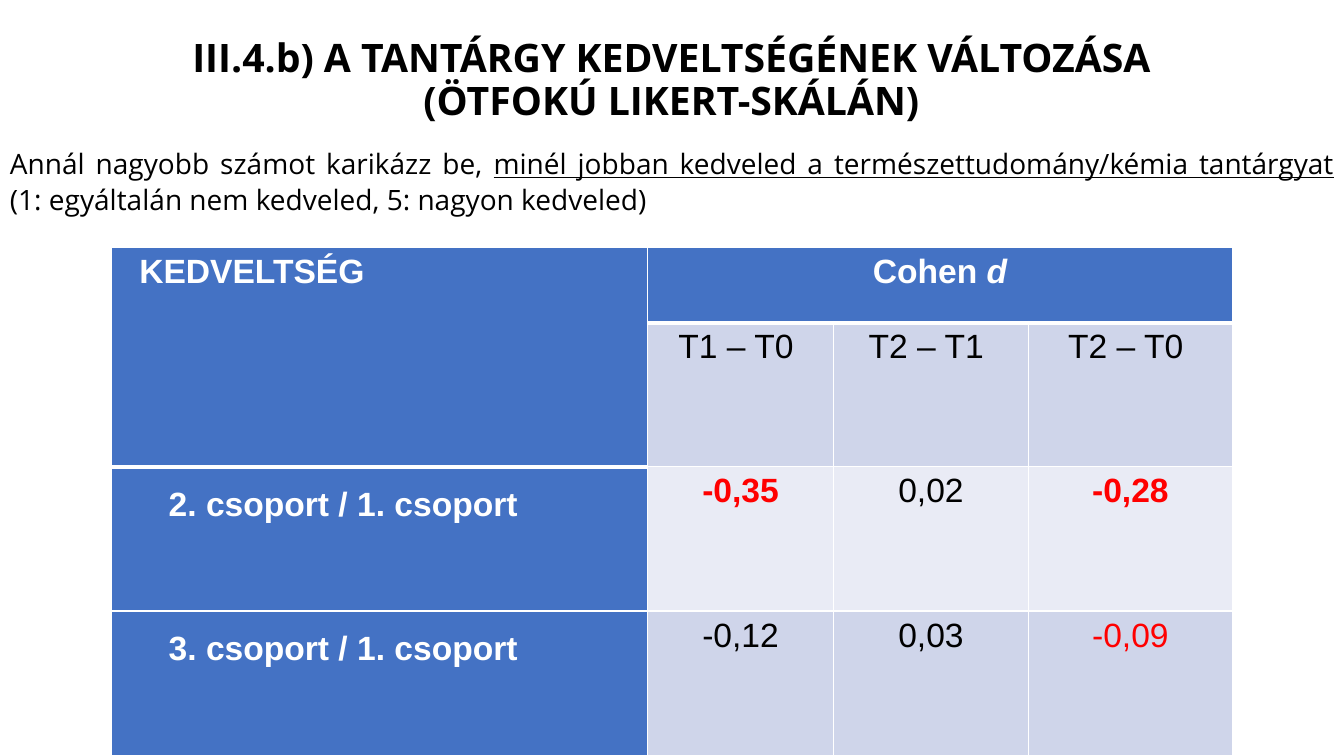
import pptx
import pptx.dml.color
import pptx.enum.text
import pptx.oxml
import pptx.oxml.ns
import pptx.util

Pt = pptx.util.Pt
RGBColor = pptx.dml.color.RGBColor
Align = pptx.enum.text.PP_ALIGN
Anchor = pptx.enum.text.MSO_ANCHOR

BLACK = RGBColor(0x00, 0x00, 0x00)
WHITE = RGBColor(0xFF, 0xFF, 0xFF)
RED = RGBColor(0xFF, 0x00, 0x00)
BLUE = RGBColor(0x44, 0x72, 0xC4)
BAND_DARK = RGBColor(0xCF, 0xD5, 0xEA)
BAND_LIGHT = RGBColor(0xE9, 0xEB, 0xF5)

TITLE_LINES = ["III.4.b) A TANTÁRGY KEDVELTSÉGÉNEK VÁLTOZÁSA", "(ÖTFOKÚ LIKERT-SKÁLÁN)"]
COLUMN_WIDTHS = [383, 133, 139, 146]
ROW_HEIGHTS = [54, 103, 103, 103]
PERIODS = ["T1 – T0 ", "T2 – T1 ", "T2 – T0 "]
# Each effect: value, colour, bold
GROUPS = [
    ("2. csoport / 1. csoport", BAND_LIGHT,
     [("-0,35", RED, True), ("0,02", BLACK, False), ("-0,28", RED, True)]),
    ("3. csoport / 1. csoport", BAND_DARK,
     [("-0,12", BLACK, False), ("0,03", BLACK, False), ("-0,09", RED, False)]),
]


def add_run(paragraph, text, size, font="Open Sans", color=BLACK,
            bold=False, italic=False, underline=False):
    run = paragraph.add_run()
    run.text = text
    run.font.name = font
    run.font.size = Pt(size)
    run.font.color.rgb = color
    run.font.bold = bold
    run.font.italic = italic
    run.font.underline = underline


def fill_title(title):
    title.left, title.top, title.width, title.height = Pt(79), Pt(14), Pt(801), Pt(88)
    title.text_frame.vertical_anchor = Anchor.MIDDLE
    paragraph = title.text_frame.paragraphs[0]
    paragraph.alignment = Align.CENTER
    paragraph.line_spacing = 0.9
    for number, line in enumerate(TITLE_LINES):
        if number:
            paragraph.add_line_break()
        add_run(paragraph, line, 28, bold=True)


def add_question(slide):
    question = slide.shapes.add_textbox(Pt(0), Pt(99.5), Pt(960), Pt(58)).text_frame
    question.word_wrap = True
    paragraph = question.paragraphs[0]
    paragraph.alignment = Align.JUSTIFY
    paragraph.line_spacing = 1.07
    paragraph.space_after = Pt(8)
    add_run(paragraph, "Annál nagyobb számot karikázz be, ", 20)
    add_run(paragraph, "minél jobban kedveled a természettudomány/kémia tantárgyat", 20,
            underline=True)
    add_run(paragraph, " (1: egyáltalán nem kedveled, 5: nagyon kedveled)", 20)


def set_borders(cell, top=1, bottom=1):
    """Draw white cell borders; the widths are in points."""
    properties = cell._tc.get_or_add_tcPr()
    for position, (side, width) in enumerate(zip("LRTB", (1, 1, top, bottom))):
        properties.insert(position, pptx.oxml.parse_xml(
            f'<a:ln{side} {pptx.oxml.ns.nsdecls("a")} w="{Pt(width)}">'
            f'<a:solidFill><a:srgbClr val="{WHITE}"/></a:solidFill></a:ln{side}>'))


def write_cell(cell, runs, fill, align=Align.CENTER, left=13.5, right=13.5,
               line_spacing=1.15, space_after=10):
    """Fill a cell with runs of (text, colour, bold, italic)."""
    cell.fill.solid()
    cell.fill.fore_color.rgb = fill
    cell.margin_left, cell.margin_right = Pt(left), Pt(right)
    cell.margin_top = cell.margin_bottom = Pt(0)
    paragraph = cell.text_frame.paragraphs[0]
    paragraph.alignment = align
    paragraph.line_spacing = line_spacing
    paragraph.space_after = Pt(space_after)
    for text, color, bold, italic in runs:
        add_run(paragraph, text, 24, "Arial", color, bold, italic)


def add_effect_table(slide):
    table = slide.shapes.add_table(
        len(ROW_HEIGHTS), len(COLUMN_WIDTHS), Pt(79.5), Pt(176.5),
        Pt(sum(COLUMN_WIDTHS)), Pt(sum(ROW_HEIGHTS))).table
    for column, width in zip(table.columns, COLUMN_WIDTHS):
        column.width = Pt(width)
    for row, height in zip(table.rows, ROW_HEIGHTS):
        row.height = Pt(height)

    table.cell(0, 0).merge(table.cell(1, 0))
    table.cell(0, 1).merge(table.cell(0, 3))
    write_cell(table.cell(0, 0), [("KEDVELTSÉG", WHITE, True, False)], BLUE,
               Align.LEFT, left=20)
    write_cell(table.cell(0, 1), [("Cohen ", WHITE, True, False), ("d", WHITE, True, True)], BLUE)
    for column, period in enumerate(PERIODS, start=1):
        write_cell(table.cell(1, column), [(period, BLACK, False, False)], BAND_DARK)
    for row, (group, band, effects) in enumerate(GROUPS, start=2):
        write_cell(table.cell(row, 0), [(group, WHITE, True, False)], BLUE,
                   Align.LEFT, left=41, right=5, line_spacing=1.5, space_after=0)
        for column, (value, color, bold) in enumerate(effects, start=1):
            write_cell(table.cell(row, column), [(value, color, bold, False)], band)

    for column in range(len(COLUMN_WIDTHS)):
        header_end = 1 if column == 0 else 0
        for row in range(len(ROW_HEIGHTS)):
            set_borders(table.cell(row, column),
                        top=3 if row == header_end + 1 else 1,
                        bottom=3 if row == header_end or (row, column) == (0, 0) else 1)


def main():
    presentation = pptx.Presentation()
    presentation.slide_width, presentation.slide_height = Pt(960), Pt(540)
    title_only = presentation.slide_layouts[5]
    slide = presentation.slides.add_slide(title_only)
    fill_title(slide.shapes.title)
    add_effect_table(slide)
    add_question(slide)
    presentation.save("out.pptx")


if __name__ == "__main__":
    main()
